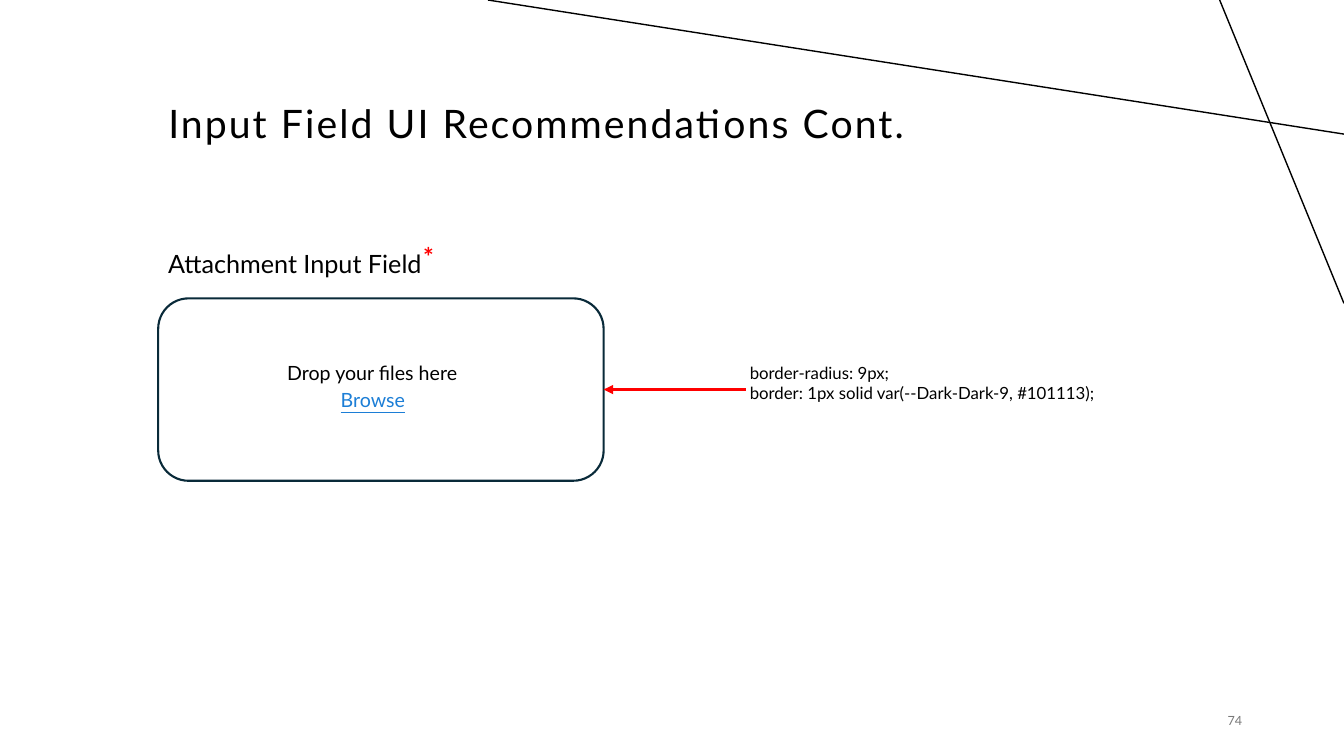
import pptx
import pptx.util
import pptx.dml.color
import pptx.enum.shapes
import pptx.enum.text
import pptx.oxml.ns
import lxml.etree

Pt = pptx.util.Pt
ALIGN = pptx.enum.text.PP_ALIGN
ANCHOR = pptx.enum.text.MSO_ANCHOR


def color(value):
    return pptx.dml.color.RGBColor.from_string(value)


def add_line(start, end, value, width):
    line = slide.shapes.add_connector(
        pptx.enum.shapes.MSO_CONNECTOR.STRAIGHT, *map(Pt, start + end))
    line.line.color.rgb = color(value)
    line.line.width = Pt(width)
    lxml.etree.SubElement(line._element.spPr, pptx.oxml.ns.qn("a:effectLst"))
    return line


presentation = pptx.Presentation()
presentation.slide_width = Pt(960)
presentation.slide_height = Pt(540)
slide = presentation.slides.add_slide(presentation.slide_layouts[5])

add_line((960, 95.8), (348.5, 0), "000000", 1)
add_line((871.2, 0), (960, 216.7), "000000", 1)

title = slide.shapes.title
title.left, title.top, title.width, title.height = map(Pt, (113, 46.8, 880.6, 61.9))
title.text_frame.text = "Input Field UI Recommendations Cont."
title.text_frame.auto_size = pptx.enum.text.MSO_AUTO_SIZE.NONE
title.text_frame.vertical_anchor = ANCHOR.BOTTOM
title_paragraph = title.text_frame.paragraphs[0]
title_paragraph.alignment = ALIGN.LEFT
title_paragraph.line_spacing = 0.9
title_run = title_paragraph.runs[0]
title_run.font.name = "Lato"
title_run.font.size = Pt(28)
title_run.font.color.rgb = color("000000")
title_run.font._element.set("spc", "150")

drop_zone = slide.shapes.add_shape(
    pptx.enum.shapes.MSO_SHAPE.ROUNDED_RECTANGLE,
    Pt(113), Pt(213.1), Pt(318.2), Pt(130.3))
drop_zone.shadow.inherit = False
drop_zone.fill.background()
drop_zone.line.color.rgb = color("092A39")
drop_zone.line.width = Pt(1.5)

texts = [
    ("74", (816.5, 500.4, 77.8, 28.8), 9, "797979"),
    ("Attachment Input Field", (113, 174.2, 213.8, 28.8), 18, "000000"),
    ("*", (295.2, 168.5, 19.4, 28.8), 18, "FF0000"),
    ("Drop your files here", (198, 254.2, 164.9, 24.5), 14, "000000"),
    ("Browse", (236.2, 273.6, 72.7, 24.5), 14, "1C7ED6"),
    ("border-radius: 9px;\nborder: 1px solid var(--Dark-Dark-9, #101113);",
     (528.5, 255.6, 267.1, 36), 12, "000000"),
]
for text, box, size, value in texts:
    shape = slide.shapes.add_textbox(*map(Pt, box))
    shape.text_frame.word_wrap = True
    shape.text_frame.text = text
    if text == "74":
        shape.text_frame.vertical_anchor = ANCHOR.MIDDLE
        shape.text_frame.paragraphs[0].alignment = ALIGN.RIGHT
    for paragraph in shape.text_frame.paragraphs:
        font = paragraph.runs[0].font
        font.name = "Lato"
        font.size = Pt(size)
        font.color.rgb = color(value)
        if text == "*":
            font.bold = True
        if text == "Browse":
            font.underline = True

arrow = add_line((532.8, 278.25), (431.2, 278.25), "FF0000", 2.25)
arrow.end_connect(drop_zone, 3)
lxml.etree.SubElement(
    arrow.line._get_or_add_ln(), pptx.oxml.ns.qn("a:tailEnd"), type="triangle")

presentation.save("out.pptx")
